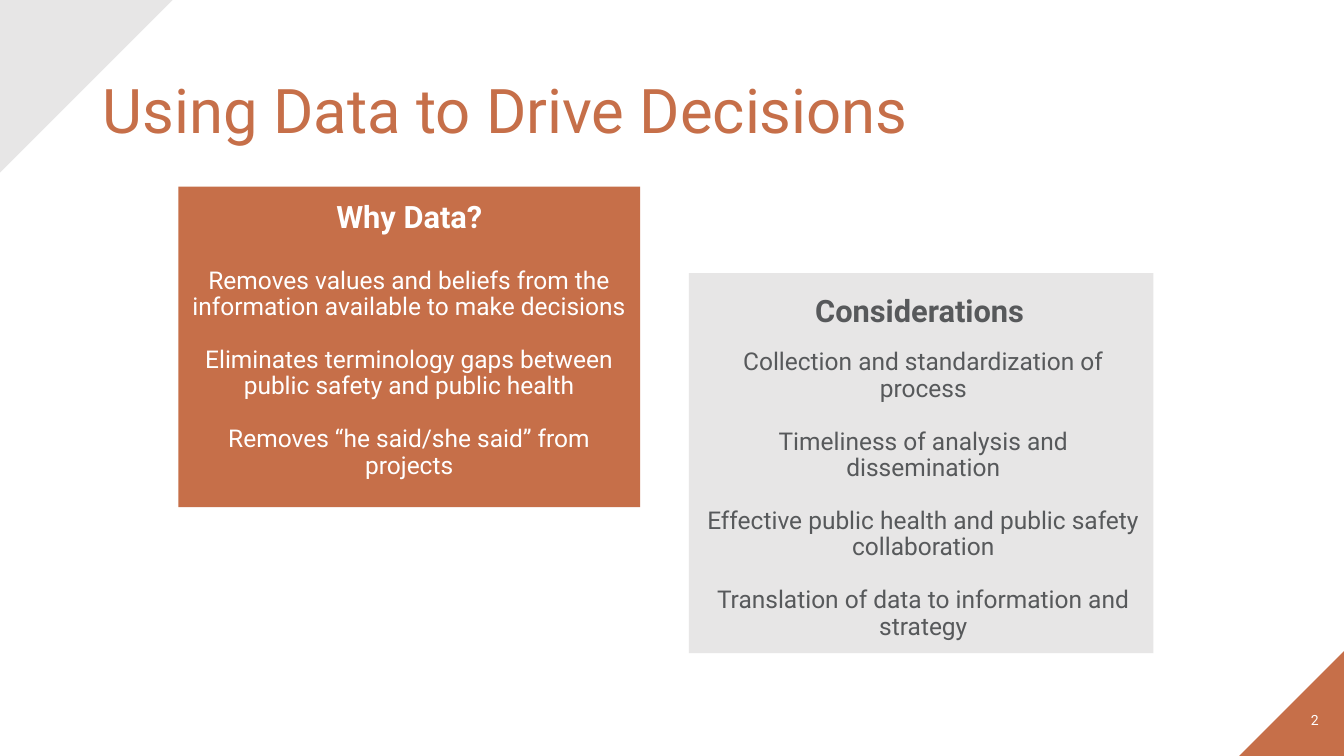
from dataclasses import dataclass

from lxml.etree import SubElement
from pptx import Presentation
from pptx.dml.color import RGBColor
from pptx.enum.shapes import MSO_SHAPE
from pptx.enum.text import MSO_ANCHOR, MSO_AUTO_SIZE, PP_ALIGN
from pptx.oxml.ns import qn
from pptx.util import Inches, Pt

WIDTH, HEIGHT = Inches(13.33), Inches(7.5)


@dataclass(frozen=True)
class Theme:
    font: str = "Roboto"
    accent: str = "C66F49"
    pale: str = "E7E6E6"
    dark: str = "57595B"
    white: str = "FFFFFF"
    title: float = 44
    heading: float = 22
    body: float = 17.5
    number: float = 10
    line: float = 0.9
    gap: float = 18.9


THEME = Theme()


def box(x, y, w, h):
    """Turn percentages of the slide into left, top, width and height."""
    return [int(share * side / 100)
            for share, side in zip((x, y, w, h), (WIDTH, HEIGHT) * 2)]


def place(sp, area):
    sp.left, sp.top, sp.width, sp.height = box(*area)


def write(sp, *lines, size, color, bold=False, align=PP_ALIGN.CENTER,
          anchor=MSO_ANCHOR.TOP, gap=0):
    tf = sp.text_frame
    tf.word_wrap = True
    tf.auto_size = MSO_AUTO_SIZE.NONE
    tf.vertical_anchor = anchor
    for i, line in enumerate(lines):
        p = tf.add_paragraph() if i else tf.paragraphs[0]
        p.alignment = align
        p.line_spacing = THEME.line
        p.space_before = Pt(gap if i else 0)
        p.space_after = Pt(0)
        pPr = p._p.get_or_add_pPr()
        pPr.set("marL", "0")
        pPr.set("indent", "0")
        SubElement(pPr, qn("a:buNone"))
        r = p.add_run()
        r.text = line
        r.font.name = THEME.font
        r.font.size = Pt(size)
        r.font.bold = bold
        r.font.color.rgb = RGBColor.from_string(color)


def add_block(s, kind, area, color, rotation=0):
    sp = s.shapes.add_shape(kind, *box(*area))
    sp.rotation = rotation
    sp.shadow.inherit = False
    sp.fill.solid()
    sp.fill.fore_color.rgb = RGBColor.from_string(color)
    sp.line.fill.background()
    return sp


def add_panel(s, area, fill):
    sp = add_block(s, MSO_SHAPE.RECTANGLE, area, fill)
    s.shapes._spTree.insert(2, sp._element)


def fill_column(s, first, heading, points, heading_area, body_area, color):
    head, body = s.placeholders[first], s.placeholders[first + 1]
    place(head, heading_area)
    write(head, heading, size=THEME.heading, color=color, bold=True)
    place(body, body_area)
    write(body, *points, size=THEME.body, color=color, gap=THEME.gap)


def main():
    prs = Presentation()
    prs.slide_width, prs.slide_height = WIDTH, HEIGHT
    s = prs.slides.add_slide(prs.slide_layouts.get_by_name("Comparison"))

    add_block(s, MSO_SHAPE.RIGHT_TRIANGLE, (92.2, 86.13, 7.8, 13.87),
              THEME.accent, 270)
    corner = add_block(s, MSO_SHAPE.RIGHT_TRIANGLE, (0, -0.1, 12.9, 22.93),
                       THEME.pale, 90)
    s.shapes._spTree.insert(2, corner._element)

    title = s.shapes.title
    place(title, (6.9, 5.33, 86.25, 19.33))
    write(title, "Using Data to Drive Decisions", size=THEME.title,
          color=THEME.accent, align=PP_ALIGN.LEFT, anchor=MSO_ANCHOR.MIDDLE)

    add_panel(s, (13.28, 24.67, 34.35, 42.4), THEME.accent)
    fill_column(
        s, 1, "Why Data?",
        ["Removes values and beliefs from the information available to make decisions",
         "Eliminates terminology gaps between public safety and public health",
         "Removes “he said/she said” from projects"],
        (13.28, 26, 34.35, 6.4), (13.28, 34.8, 34.35, 34.4), THEME.white)

    add_panel(s, (51.25, 36.13, 34.57, 50.27), THEME.pale)
    fill_column(
        s, 3, "Considerations",
        ["Collection and standardization of process",
         "Timeliness of analysis and dissemination",
         "Effective public health and public safety collaboration",
         "Translation of data to information and strategy"],
        (51.25, 38.53, 34.35, 6), (51.53, 45.6, 34.35, 37.73), THEME.dark)

    number = s.shapes.add_textbox(*box(93.15, 92.67, 5.7, 5.33))
    write(number, "2", size=THEME.number, color=THEME.white,
          align=PP_ALIGN.RIGHT, anchor=MSO_ANCHOR.MIDDLE)

    prs.save("out.pptx")


if __name__ == "__main__":
    main()
